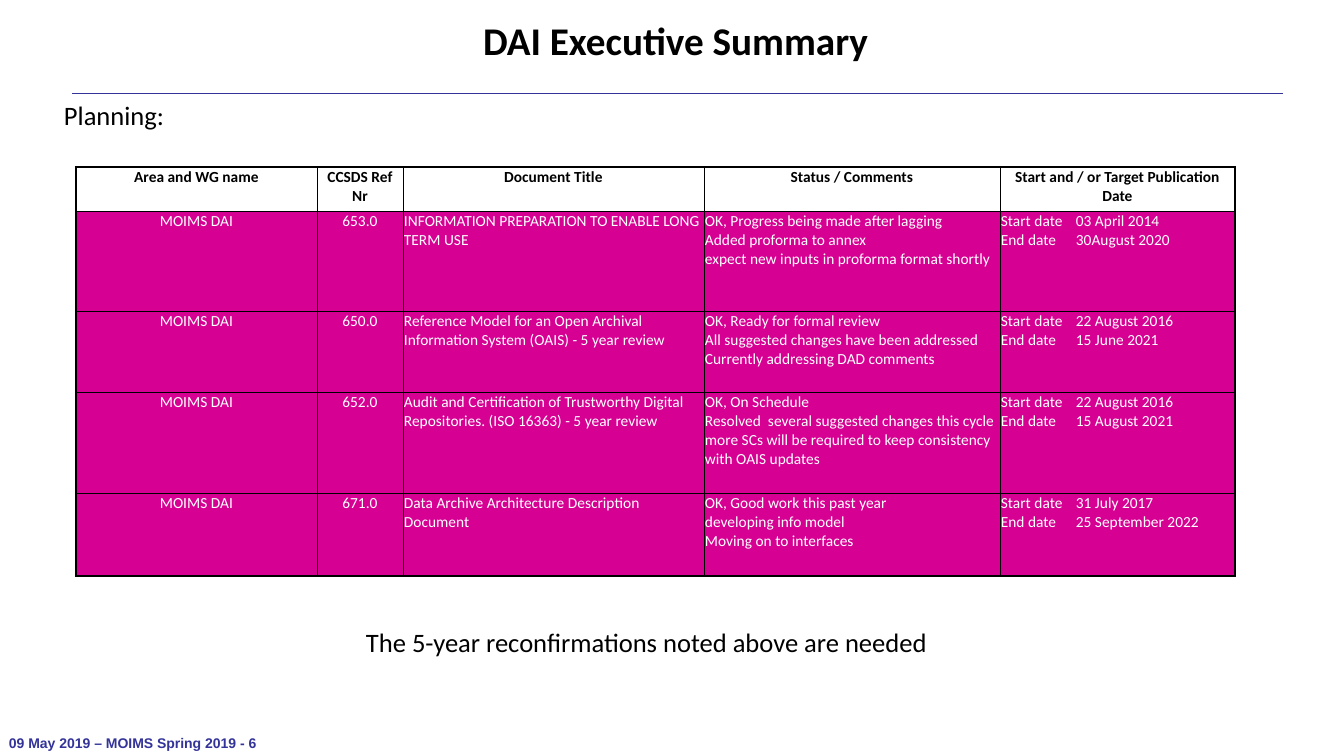
from dataclasses import dataclass

from lxml.etree import SubElement
from pptx import Presentation
from pptx.dml.color import RGBColor
from pptx.enum.shapes import MSO_CONNECTOR as Connector
from pptx.enum.text import MSO_ANCHOR as Anchor, PP_ALIGN as Align
from pptx.oxml.ns import qn
from pptx.slide import Slide
from pptx.table import Table
from pptx.text.text import TextFrame
from pptx.util import Emu, Pt

BLACK, WHITE, NAVY, MAGENTA = "000000", "FFFFFF", "333399", "D60093"
COLUMN_WIDTHS = (241, 86, 301, 296, 235)
ROW_HEIGHTS = (44, 100, 81, 101, 83)
DATE_TAB = 75
CENTRED_COLUMNS = 2
HEADINGS = (
    "Area and WG name",
    "CCSDS Ref Nr",
    "Document Title",
    "Status / Comments",
    "Start and / or Target Publication Date",
)


@dataclass(frozen=True)
class Style:
    size: int
    color: str = BLACK
    bold: bool = False
    font: str = "Calibri"
    align: Align = Align.LEFT


@dataclass(frozen=True)
class Label:
    text: str
    left: int
    top: int
    width: int
    height: int
    style: Style
    inset: tuple[int, int] = (6, 6)
    wrap: bool = True


@dataclass(frozen=True)
class Project:
    number: str
    title: str
    status: str
    start: str
    end: str

    def cells(self) -> tuple[str, ...]:
        dates = f"Start date\t{self.start}\nEnd date\t{self.end}"
        return "MOIMS DAI", self.number, self.title, self.status, dates


LABELS = (
    Label("DAI Executive Summary", 286, 10, 779, 60, Style(28, bold=True, align=Align.CENTER)),
    Label("Planning:", 58, 93, 300, 45, Style(19)),
    Label("The 5-year reconfirmations noted above are needed", 360, 620, 700, 45, Style(19)),
    Label(
        "09 May 2019 – MOIMS Spring 2019 - 6", 0, 730, 277, 26,
        Style(10, NAVY, True, "Arial"), (9, 4), False,
    ),
)

PROJECTS = (
    Project(
        "653.0",
        "INFORMATION PREPARATION TO ENABLE LONG TERM USE",
        "OK, Progress being made after lagging\nAdded proforma to annex\n"
        "expect new inputs in proforma format shortly",
        "03 April 2014",
        "30August 2020",
    ),
    Project(
        "650.0",
        "Reference Model for an Open Archival Information System (OAIS) - 5 year review",
        "OK, Ready for formal review\nAll suggested changes have been addressed\n"
        "Currently addressing DAD comments",
        "22 August 2016",
        "15 June 2021",
    ),
    Project(
        "652.0",
        "Audit and Certification of Trustworthy Digital Repositories. (ISO 16363) - 5 year review",
        "OK, On Schedule\nResolved  several suggested changes this cycle\n"
        "more SCs will be required to keep consistency with OAIS updates",
        "22 August 2016",
        "15 August 2021",
    ),
    Project(
        "671.0",
        "Data Archive Architecture Description Document",
        "OK, Good work this past year\ndeveloping info model\nMoving on to interfaces",
        "31 July 2017",
        "25 September 2022",
    ),
)


def px(length: int) -> Emu:
    return Emu(round(length * 914400 / 100.8))


def rgb(color: str) -> RGBColor:
    return RGBColor.from_string(color)


def write(frame: TextFrame, text: str, style: Style) -> None:
    frame.text = text
    for para in frame.paragraphs:
        para.alignment = style.align
        for span in para.runs:
            span.font.name = style.font
            span.font.size = Pt(style.size)
            span.font.bold = style.bold
            span.font.color.rgb = rgb(style.color)


def add_label(page: Slide, label: Label) -> None:
    box = page.shapes.add_textbox(*map(px, (label.left, label.top, label.width, label.height)))
    frame = box.text_frame
    frame.word_wrap = label.wrap
    frame.margin_left = frame.margin_right = px(label.inset[0])
    frame.margin_top = frame.margin_bottom = px(label.inset[1])
    write(frame, label.text, label.style)


def add_rule(page: Slide) -> None:
    rule = page.shapes.add_connector(Connector.STRAIGHT, px(72), px(93), px(1283), px(93))
    rule.line.color.rgb = rgb(NAVY)
    rule.line.width = Pt(0.13)
    SubElement(rule._element.spPr, qn("a:effectLst"))


def add_borders(table: Table, row: int, column: int) -> None:
    properties = table.cell(row, column)._tc.get_or_add_tcPr()
    outer_sides = {
        "L": column == 0,
        "R": column == len(COLUMN_WIDTHS) - 1,
        "T": row == 0,
        "B": row == len(ROW_HEIGHTS) - 1,
    }
    for side, outer in outer_sides.items():
        line = SubElement(properties, qn(f"a:ln{side}"), w=str(Pt(2 if outer else 0.5)))
        fill = SubElement(line, qn("a:solidFill"))
        SubElement(fill, qn("a:srgbClr"), val=BLACK)


def fill_cell(table: Table, row: int, column: int, text: str) -> None:
    cell = table.cell(row, column)
    header = row == 0
    add_borders(table, row, column)
    if header:
        cell.fill.background()
    else:
        cell.fill.solid()
        cell.fill.fore_color.rgb = rgb(MAGENTA)
    cell.margin_left = cell.margin_right = cell.margin_top = px(1)
    cell.margin_bottom = 0
    cell.vertical_anchor = Anchor.TOP
    align = Align.CENTER if header or column < CENTRED_COLUMNS else Align.LEFT
    write(cell.text_frame, text, Style(11, BLACK if header else WHITE, header, align=align))
    if "\t" in text:
        for para in cell.text_frame.paragraphs:
            tabs = SubElement(para._p.get_or_add_pPr(), qn("a:tabLst"))
            SubElement(tabs, qn("a:tab"), pos=str(px(DATE_TAB)), algn="l")


def add_plan(page: Slide) -> None:
    rows = (HEADINGS, *(project.cells() for project in PROJECTS))
    table = page.shapes.add_table(
        len(rows), len(HEADINGS), px(76), px(167), px(sum(COLUMN_WIDTHS)), px(sum(ROW_HEIGHTS))
    ).table
    table.first_row = table.horz_banding = False
    for column, width in zip(table.columns, COLUMN_WIDTHS):
        column.width = px(width)
    for row, height in zip(table.rows, ROW_HEIGHTS):
        row.height = px(height)
    for row_index, texts in enumerate(rows):
        for column_index, text in enumerate(texts):
            fill_cell(table, row_index, column_index, text)


def main() -> None:
    deck = Presentation()
    deck.slide_width, deck.slide_height = px(1344), px(756)
    page = deck.slides.add_slide(deck.slide_layouts[6])
    add_rule(page)
    for label in LABELS:
        add_label(page, label)
    add_plan(page)
    deck.save("out.pptx")


if __name__ == "__main__":
    main()
